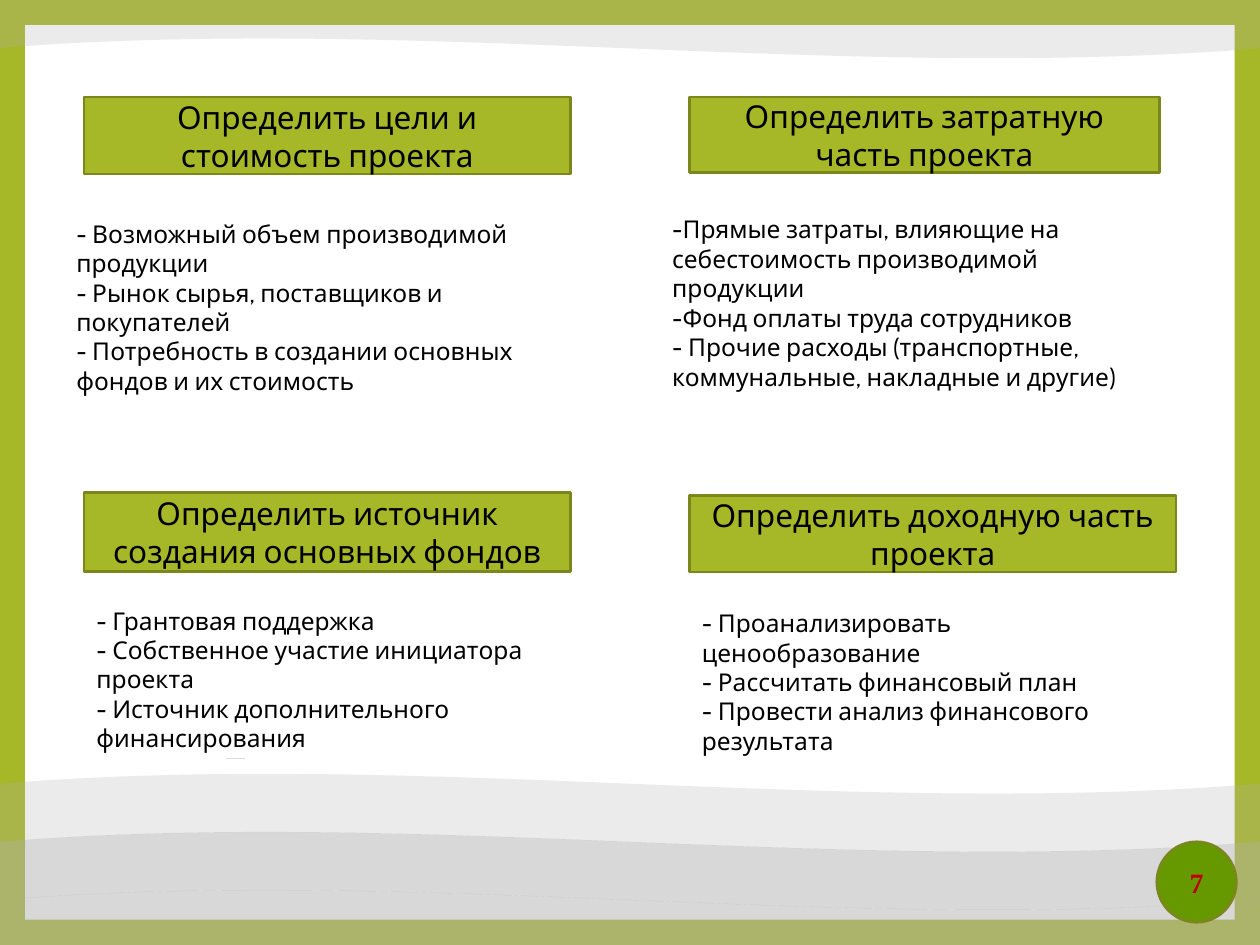
"""Build a slide with four project planning steps on a green frame with waves."""
from lxml import etree
from pptx import Presentation
from pptx import util as u
from pptx.dml.color import RGBColor
from pptx.enum import shapes, text
from pptx.oxml.ns import qn

HUES = {"lime": "A6B727", "olive": "7B871D", "white": "FFFFFF", "gray": "B2B2B2",
        "pale": "DDDDDD", "green": "669900", "red": "C00000", "black": "000000"}
KIND = shapes.MSO_SHAPE
STEPS = [
    ("Определить цели и стоимость проекта", (48, 55.5, 278, 44),
     (36.5, 121.5, 306, 75),
     ["- Возможный объем производимой продукции",
      "- Рынок сырья, поставщиков и покупателей",
      "- Потребность в создании основных фондов и их стоимость"]),
    ("Определить затратную часть проекта", (394, 55.5, 268.5, 43),
     (377, 119, 300, 109),
     ["-Прямые затраты, влияющие на себестоимость производимой продукции",
      "-Фонд оплаты труда сотрудников",
      "- Прочие расходы (транспортные, коммунальные, накладные и другие)"]),
    ("Определить источник создания основных фондов", (48, 281.5, 278, 45),
     (48, 342.5, 278, 75),
     ["- Грантовая поддержка",
      "- Собственное участие инициатора проекта",
      "- Источник дополнительного финансирования"]),
    ("Определить доходную часть проекта", (394, 283, 278, 44),
     (394, 344, 278, 58),
     ["- Проанализировать ценообразование",
      "- Рассчитать финансовый план",
      "- Провести анализ финансового результата"]),
]
HEAD = {"name": "Cabin", "size": u.Pt(18)}
BODY = {"name": "Cabin", "size": u.Pt(14)}
PAGE = {"name": "Times New Roman", "size": u.Pt(16), "bold": True}
WAVES = [(-3, -11.5, 723, 25)] + [
    (0, 442 + 33.2 * row, 720, clear) for row, clear in enumerate((25, 50, 50))]


def hue(name):
    return RGBColor.from_string(HUES[name])


def pts(box):
    return [u.Pt(val) for val in box]


def write(frame, lines, font, ink="black", align=None):
    frame.word_wrap = True
    for num, line in enumerate(lines):
        para = frame.paragraphs[0] if num == 0 else frame.add_paragraph()
        para.alignment = align
        run = para.add_run()
        run.text = line
        for key, val in font.items():
            setattr(run.font, key, val)
        run.font.color.rgb = hue(ink)


def draw(slide, kind, box, fill, edge=None):
    shape = slide.shapes.add_shape(kind, *pts(box))
    shape.shadow.inherit = False
    shape.fill.solid()
    shape.fill.fore_color.rgb = hue(fill)
    if edge:
        shape.line.color.rgb = hue(edge)
        shape.line.width = u.Pt(1.5)
    else:
        shape.line.fill.background()
    return shape


def label(shape, line, font, ink="black"):
    shape.text_frame.vertical_anchor = text.MSO_ANCHOR.MIDDLE
    write(shape.text_frame, [line], font, ink, text.PP_ALIGN.CENTER)


def wave(slide, left, top, width, clear):
    shape = draw(slide, KIND.WAVE, (left, top, width, 45), "gray")
    shape.adjustments[0] = 0.13
    shape.adjustments[1] = 0
    tone = shape.fill._xPr.find(".//" + qn("a:srgbClr"))
    etree.SubElement(tone, qn("a:alpha")).set("val", str(clear * 1000))


def dash(slide):
    line = slide.shapes.add_connector(
        shapes.MSO_CONNECTOR.STRAIGHT, *pts((129, 433.5, 140, 433.5)))
    line.line.color.rgb = hue("pale")
    line.line.width = u.Pt(0.75)
    etree.SubElement(line._element.spPr, qn("a:effectLst"))


def main():
    deck = Presentation()
    deck.slide_width, deck.slide_height = pts((720, 540))
    slide = deck.slides.add_slide(deck.slide_layouts[6])
    back = slide.background.fill
    back.solid()
    back.fore_color.rgb = hue("lime")
    draw(slide, KIND.RECTANGLE, (14.4, 14.4, 691.2, 511.2), "white")
    for spot in WAVES:
        wave(slide, *spot)
    dash(slide)
    disc = draw(slide, KIND.OVAL, (661, 481, 45.5, 46), "green", "olive")
    label(disc, "7", PAGE, "red")
    for title, bar, area, lines in STEPS:
        label(draw(slide, KIND.RECTANGLE, bar, "lime", "olive"), title, HEAD)
        note = slide.shapes.add_textbox(*pts(area))
        write(note.text_frame, lines, BODY)
    deck.save("out.pptx")


if __name__ == "__main__":
    main()
